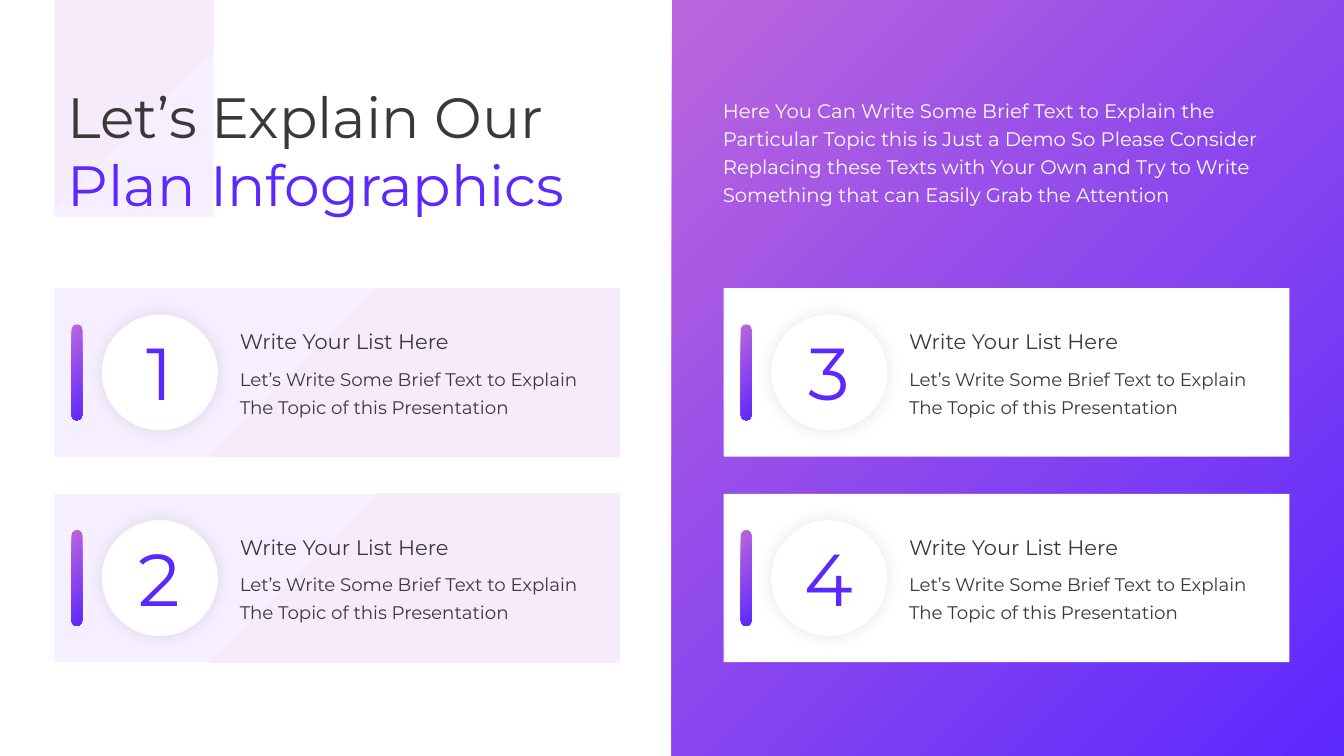
import pptx
import pptx.util
import pptx.dml.color
import pptx.enum.shapes
import pptx.enum.text
import pptx.oxml.ns
import lxml.etree

RGB = pptx.dml.color.RGBColor
WHITE = RGB(0xFF, 0xFF, 0xFF)
BLACK = RGB(0x00, 0x00, 0x00)
DARK = RGB(0x3B, 0x38, 0x38)
BLUE = RGB(0x5D, 0x28, 0xFE)
PINK = RGB(0xBB, 0x66, 0xDD)
ROSE = RGB(0xF6, 0xEB, 0xFB)
LILAC = RGB(0xF6, 0xEF, 0xFF)

# Gradients: start colour, end colour, start position
VIVID = (BLUE, PINK, 0)
PALE = (ROSE, LILAC, 0.12)

KIND = pptx.enum.shapes.MSO_SHAPE
LEFT = pptx.enum.text.PP_ALIGN.LEFT
MID = pptx.enum.text.PP_ALIGN.CENTER
qn = pptx.oxml.ns.qn


def add(parent, tag, **attrs):
    return lxml.etree.SubElement(parent, qn(tag), attrs)


class Page:
    """Style and current slide; boxes are in percent of the slide's size."""
    font = "Montserrat"

    def __init__(self, deck):
        self.deck = deck
        self.slide = deck.slides.add_slide(deck.slide_layouts[1])
        self.layer = self.slide.shapes

    def group(self):
        self.layer = self.slide.shapes.add_group_shape().shapes

    def frame(self, box):
        wide, high = self.deck.slide_width, self.deck.slide_height
        return [round(part * side / 100)
                for part, side in zip(box, (wide, high, wide, high))]

    def shape(self, kind, box, paint, corner="br"):
        shape = self.layer.add_shape(kind, *self.frame(box))
        shape.shadow.inherit = False
        shape.line.fill.background()
        if paint in (VIVID, PALE):
            self.blend(shape, paint, corner)
        else:
            shape.fill.solid()
            shape.fill.fore_color.rgb = paint
        return shape

    def blend(self, shape, paint, corner):
        first, last, start = paint
        shape.fill.gradient()
        stops = shape.fill.gradient_stops
        for stop, tint, spot in zip(stops, (first, last), (start, 1)):
            stop.color.rgb = tint
            stop.position = spot
        grad = shape.element.spPr.find(qn("a:gradFill"))
        grad.remove(grad.find(qn("a:lin")))
        ring = add(grad, "a:path", path="circle")
        sides = "lt" if corner == "br" else "rb"
        add(ring, "a:fillToRect", **{side: "100000" for side in sides})

    def glow(self, shape, blur, alpha):
        effects = shape.element.spPr.find(qn("a:effectLst"))
        shade = add(effects, "a:outerShdw", blurRad=str(pptx.util.Pt(blur)),
                    algn="ctr", rotWithShape="0")
        tint = add(shade, "a:srgbClr", val=str(BLACK))
        add(tint, "a:alpha", val=str(alpha * 1000))

    def text(self, box, words, size, color, align=LEFT, wrap=True):
        label = self.layer.add_textbox(*self.frame(box))
        return self.dress(label, words, size, color, align, wrap)

    def holder(self, index, box, words, size, color):
        shape = self.slide.placeholders[index]
        shape.left, shape.top, shape.width, shape.height = self.frame(box)
        # Bring it in front of the backdrops
        shape.element.getparent().append(shape.element)
        return self.dress(shape, words, size, color)

    def dress(self, shape, words, size, color, align=LEFT, wrap=True):
        frame = shape.text_frame
        frame.text = words
        frame.word_wrap = wrap
        frame.auto_size = pptx.enum.text.MSO_AUTO_SIZE.NONE
        frame.vertical_anchor = pptx.enum.text.MSO_ANCHOR.TOP
        for para in frame.paragraphs:
            para.alignment = align
            para.space_before = pptx.util.Pt(0)
            for run in para.runs:
                run.font.name = self.font
                run.font.size = pptx.util.Pt(size)
                run.font.color.rgb = color
        return frame.paragraphs

    def card(self, x, y, paint, digit, width):
        self.group()
        self.shape(KIND.RECTANGLE, (x, y, 42.08, 22.27), paint)
        disc = self.shape(KIND.OVAL, (x + 3.53, y + 3.47, 8.63, 15.33), WHITE)
        self.glow(disc, 12, 10)
        self.text((x + 7.84 - width / 2, y + 4.53, width, 13.07),
                  digit, 52.5, BLUE, MID, wrap=False)
        bar = self.shape(KIND.ROUNDED_RECTANGLE,
                         (x + 1.28, y + 4.8, 0.78, 12.67), VIVID)
        bar.adjustments[0] = 0.5
        self.text((x + 13.05, y + 4.67, 18.68, 4.67),
                  "Write Your List Here", 15, DARK)
        note = self.text((x + 13.05, y + 9.87, 27.3, 7.73),
                         "Let’s Write Some Brief Text to Explain\n"
                         "The Topic of this Presentation", 13, DARK)
        note[1].line_spacing = pptx.util.Pt(20)
        self.layer = self.slide.shapes


def main():
    deck = pptx.Presentation()
    deck.slide_width = pptx.util.Inches(13.33)
    deck.slide_height = pptx.util.Inches(7.5)
    page = Page(deck)
    left, top, across, down = 4.05, 38.13, 49.8, 27.2

    # Left and right backdrops
    page.shape(KIND.RECTANGLE, (left, 0, 11.85, 28.67), PALE, corner="tl")
    page.shape(KIND.RECTANGLE, (50, 0, 50, 100), VIVID)

    # Title and introduction
    title = page.holder(0, (4.28, 10.13, 41.55, 19.47),
                        "Let’s Explain Our\nPlan Infographics", 40.5, DARK)
    title[1].runs[0].font.color.rgb = BLUE
    intro = page.holder(1, (53.03, 11.87, 42.15, 16),
                        "Here You Can Write Some Brief Text to Explain the\n"
                        "Particular Topic this is Just a Demo So Please Consider\n"
                        "Replacing these Texts with Your Own and Try to Write\n"
                        "Something that can Easily Grab the Attention", 14, WHITE)
    for para in intro:
        para.line_spacing = pptx.util.Pt(20)
        props = para._p.get_or_add_pPr()
        props.set("marL", "0")
        props.set("indent", "0")
        add(props, "a:buNone")

    # Numbered cards, column by column
    for spot, width in enumerate((3.75, 4.8, 4.88, 5.4)):
        col, row = divmod(spot, 2)
        page.card(left + col * across, top + row * down,
                  WHITE if col else PALE, str(spot + 1), width)

    deck.save("out.pptx")


if __name__ == "__main__":
    main()
